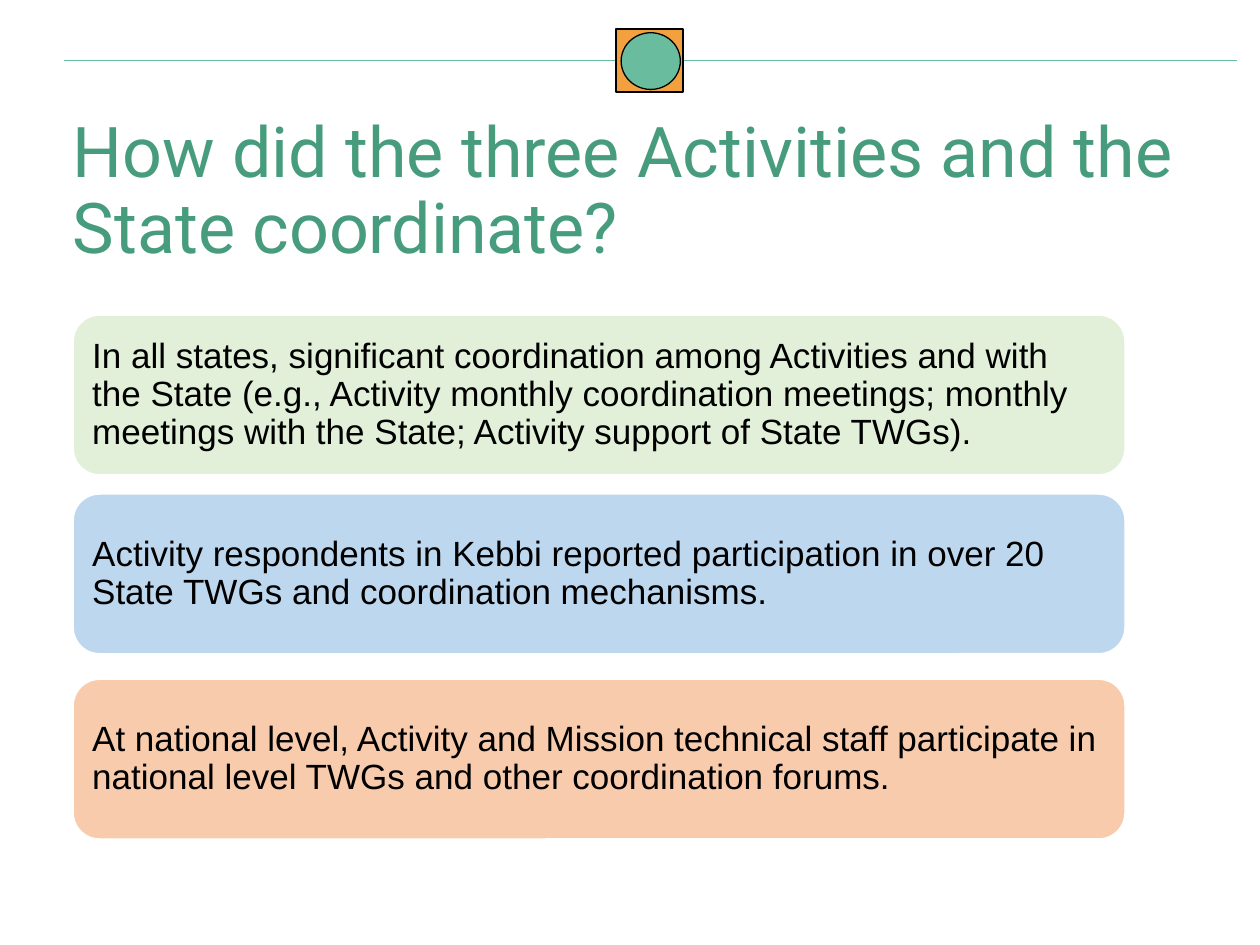
from dataclasses import dataclass

import pptx
import pptx.dml.color
import pptx.enum.shapes
import pptx.enum.text
import pptx.oxml.ns
import pptx.util
from lxml import etree

Inches = pptx.util.Inches
Pt = pptx.util.Pt
Kind = pptx.enum.shapes.MSO_SHAPE
Anchor = pptx.enum.text.MSO_ANCHOR

GREEN = "69BC9E"
BLACK = "000000"
LEFT, WIDTH, HEIGHT = 0.58, 8.35, 1.27
RADIUS = 0.21
INSET = 0.09


@dataclass
class Card:
    top: float
    fill: str
    text: str


CARDS = [
    Card(2.5, "E2F0D9",
         "In all states, significant coordination among Activities and with "
         "the State (e.g., Activity monthly coordination meetings; monthly "
         "meetings with the State; Activity support of State TWGs)."),
    Card(3.92, "BDD7EE",
         "Activity respondents in Kebbi reported participation in over 20 "
         "State TWGs and coordination mechanisms."),
    Card(5.39, "F8CBAD",
         "At national level, Activity and Mission technical staff participate "
         "in national level TWGs and other coordination forums."),
]


def color(code: str) -> pptx.dml.color.RGBColor:
    return pptx.dml.color.RGBColor.from_string(code)


def add_shape(slide, kind, box: tuple, fill: str, line: str, width: float):
    shape = slide.shapes.add_shape(kind, *map(Inches, box))
    shape.shadow.inherit = False
    shape.fill.solid()
    shape.fill.fore_color.rgb = color(fill)
    shape.line.color.rgb = color(line)
    shape.line.width = Pt(width)
    return shape


def set_text(frame, text: str, font: str, size: float, code: str) -> None:
    frame.text = text
    frame.word_wrap = True
    para = frame.paragraphs[0]
    para.alignment = pptx.enum.text.PP_ALIGN.LEFT
    para.line_spacing = 0.9
    run = para.runs[0]
    run.font.name = font
    run.font.size = Pt(size)
    run.font.color.rgb = color(code)


def add_rule(slide) -> None:
    """Draw the header line with its square and circle."""
    line = slide.shapes.add_connector(
        pptx.enum.shapes.MSO_CONNECTOR.STRAIGHT,
        Inches(0.51), Inches(0.48), Inches(9.82), Inches(0.48))
    line.line.color.rgb = color(GREEN)
    line.line.width = Pt(0.75)
    props = line._element.spPr
    etree.SubElement(props, pptx.oxml.ns.qn("a:effectLst"))
    add_shape(slide, Kind.RECTANGLE, (4.89, 0.23, 0.53, 0.5),
              "F2A13E", BLACK, 1)
    add_shape(slide, Kind.OVAL, (4.93, 0.26, 0.47, 0.45), GREEN, BLACK, 0.75)


def add_title(slide) -> None:
    box = slide.shapes.add_textbox(
        Inches(0.48), Inches(0.88), Inches(8.96), Inches(0.92))
    frame = box.text_frame
    set_text(frame, "How did the three Activities and the State coordinate?",
             "Roboto", 40, "469C7D")
    frame.vertical_anchor = Anchor.TOP
    frame.margin_right = 0


def add_card(slide, card: Card) -> None:
    shape = add_shape(slide, Kind.ROUNDED_RECTANGLE,
                      (LEFT, card.top, WIDTH, HEIGHT), card.fill, "FFFFFF", 1)
    shape.adjustments[0] = RADIUS / HEIGHT
    frame = shape.text_frame
    set_text(frame, card.text, "Arial", 20, BLACK)
    frame.vertical_anchor = Anchor.MIDDLE
    frame.margin_left = frame.margin_right = Inches(INSET)
    frame.margin_top = frame.margin_bottom = Inches(INSET)


def main() -> None:
    deck = pptx.Presentation()
    deck.slide_width = Inches(10)
    deck.slide_height = Inches(7.5)
    slide = deck.slides.add_slide(deck.slide_layouts[6])
    add_rule(slide)
    add_title(slide)
    for card in CARDS:
        add_card(slide, card)
    deck.save("out.pptx")


if __name__ == "__main__":
    main()
